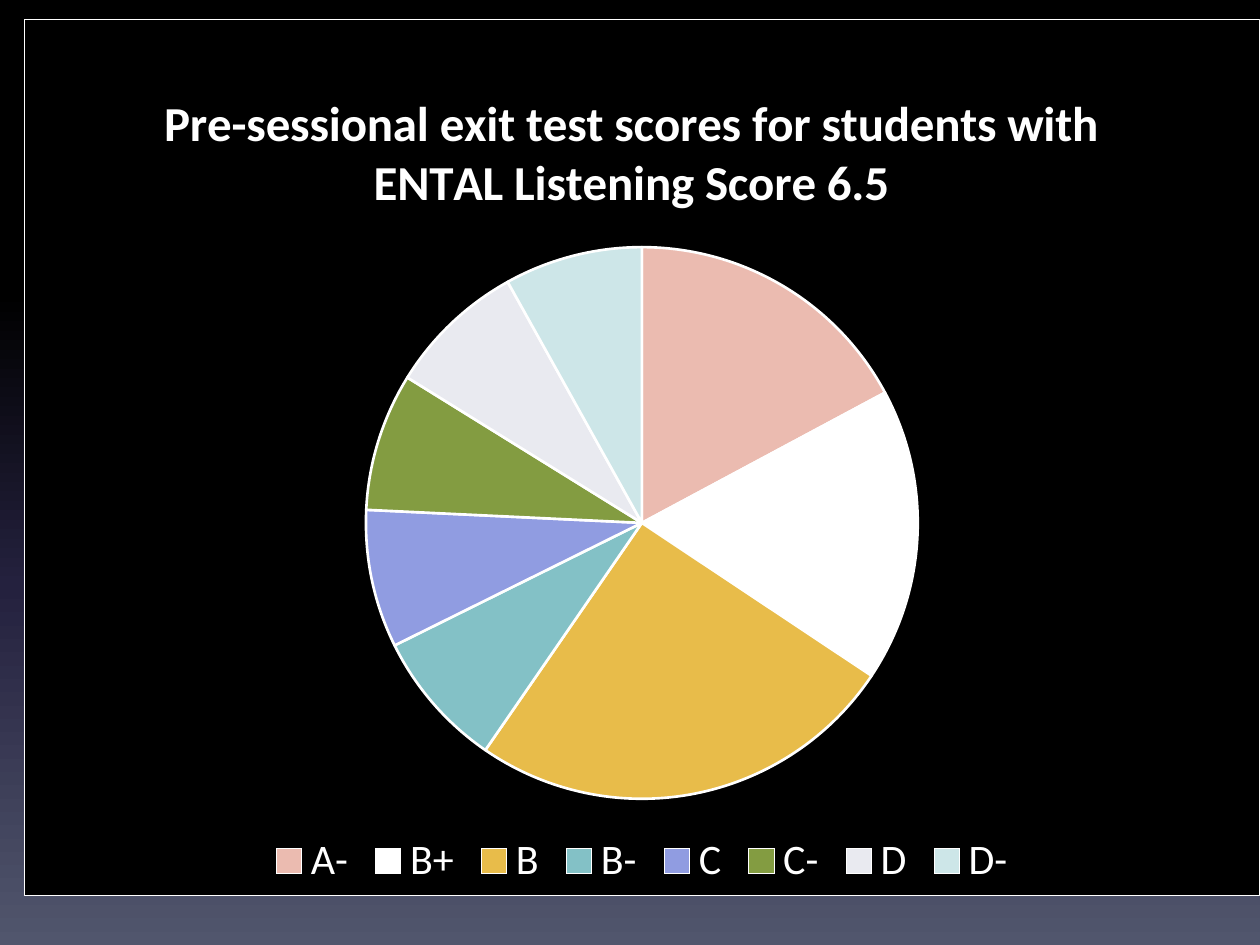
import lxml.etree
import pptx
import pptx.chart.data
import pptx.dml.color
import pptx.enum.chart
import pptx.oxml
import pptx.oxml.ns
import pptx.util
from pptx.util import Inches

qn = pptx.oxml.ns.qn
NAMESPACES = pptx.oxml.ns.nsdecls("a", "c", "p")
FONT = "Calibri"
WHITE = "FFFFFF"
BLACK = "000000"

TITLE_LINES = ["Pre-sessional exit test scores for students with",
               "ENTAL Listening Score 6.5"]
# Grade, share of students in percent, slice colour
GRADES = [
    ("A-", 17, "EBBBB0"), ("B+", 17, "FFFFFF"), ("B", 25, "E8BC4A"),
    ("B-", 8, "83C1C6"), ("C", 8, "909CE1"), ("C-", 8, "839C41"),
    ("D", 8, "E9EAF0"), ("D-", 8, "CDE6E8"),
]


def color(value):
    return pptx.dml.color.RGBColor.from_string(value)


class Deck:
    def __init__(self, width, height):
        self.presentation = pptx.Presentation()
        self.presentation.slide_width = Inches(width)
        self.presentation.slide_height = Inches(height)
        self.slide = self.presentation.slides.add_slide(
            self.presentation.slide_layouts[6])

    def style(self, font, size, bold=False):
        font.name, font.size, font.bold = FONT, pptx.util.Pt(size), bold
        font.color.rgb = color(WHITE)

    def gradient_background(self, stops):
        """Fill the slide from top to bottom with (percent, colour) stops."""
        fill = self.slide.background.fill
        fill.gradient()
        fill.gradient_angle = 270
        stop_list = self.slide.element.find(".//" + qn("a:gsLst"))
        for stop in list(stop_list):
            stop_list.remove(stop)
        for percent, value in stops:
            stop = lxml.etree.SubElement(stop_list, qn("a:gs"), pos=str(percent * 1000))
            lxml.etree.SubElement(stop, qn("a:srgbClr"), val=value)

    def place(self, parent, index, inner=False, **fractions):
        """Give a chart part a manual layout in fractions of the chart."""
        for old in parent.findall(qn("c:layout")):
            parent.remove(old)
        layout = lxml.etree.Element(qn("c:layout"))
        manual = lxml.etree.SubElement(layout, qn("c:manualLayout"))
        if inner:
            lxml.etree.SubElement(manual, qn("c:layoutTarget"), val="inner")
        for axis in "xy":
            lxml.etree.SubElement(manual, qn(f"c:{axis}Mode"), val="edge")
        for key, value in fractions.items():
            lxml.etree.SubElement(manual, qn("c:" + key), val=str(value))
        parent.insert(index, layout)

    def pie(self, left, top, width, height, grades):
        scores = pptx.chart.data.CategoryChartData()
        scores.categories = [grade for grade, _, _ in grades]
        scores.add_series("Series 1", [share for _, share, _ in grades])
        chart = self.slide.shapes.add_chart(
            pptx.enum.chart.XL_CHART_TYPE.PIE, Inches(left), Inches(top),
            Inches(width), Inches(height), scores).chart
        self.style(chart.font, 10)
        plot = chart.plots[0]
        plot.vary_by_categories = True

        # Slices
        for index, (_, _, value) in enumerate(grades):
            slice_format = plot.series[0].points[index].format
            slice_format.fill.solid()
            slice_format.fill.fore_color.rgb = color(value)
            slice_format.line.color.rgb = color(WHITE)
            slice_format.line.width = pptx.util.Pt(1.5)

        # Legend
        chart.has_legend = True
        chart.legend.position = pptx.enum.chart.XL_LEGEND_POSITION.BOTTOM
        chart.legend.include_in_layout = False
        self.style(chart.legend.font, 24)

        # Black panel with a thin white border
        panel = pptx.oxml.parse_xml(
            f'<c:spPr {NAMESPACES}>'
            f'<a:solidFill><a:srgbClr val="{BLACK}"/></a:solidFill>'
            f'<a:ln w="9525"><a:solidFill><a:srgbClr val="{WHITE}"/></a:solidFill></a:ln>'
            '</c:spPr>')
        chart.element.find(qn("c:chart")).addnext(panel)
        self.place(chart.element.find(".//" + qn("c:plotArea")), 0, inner=True,
                   x=0.27, y=0.26, w=0.46, h=0.63)
        return chart

    def chart_title(self, chart, lines, size, x, y):
        chart.has_title = True
        frame = chart.chart_title.text_frame
        frame.text = "\n".join(lines)
        for paragraph in frame.paragraphs:
            for run in paragraph.runs:
                self.style(run.font, size, bold=True)
        chart.chart_title.include_in_layout = False
        self.place(chart.element.find(".//" + qn("c:title")), 1, x=x, y=y)


def main():
    deck = Deck(10, 7.5)
    deck.gradient_background(
        [(0, BLACK), (31, BLACK), (62, "24213E"), (100, "51566D")])
    scores_chart = deck.pie(0.19, 0.15, 9.81, 6.96, GRADES)
    deck.chart_title(scores_chart, TITLE_LINES, 28, x=0.11, y=0.08)
    deck.presentation.save("out.pptx")


if __name__ == "__main__":
    main()
